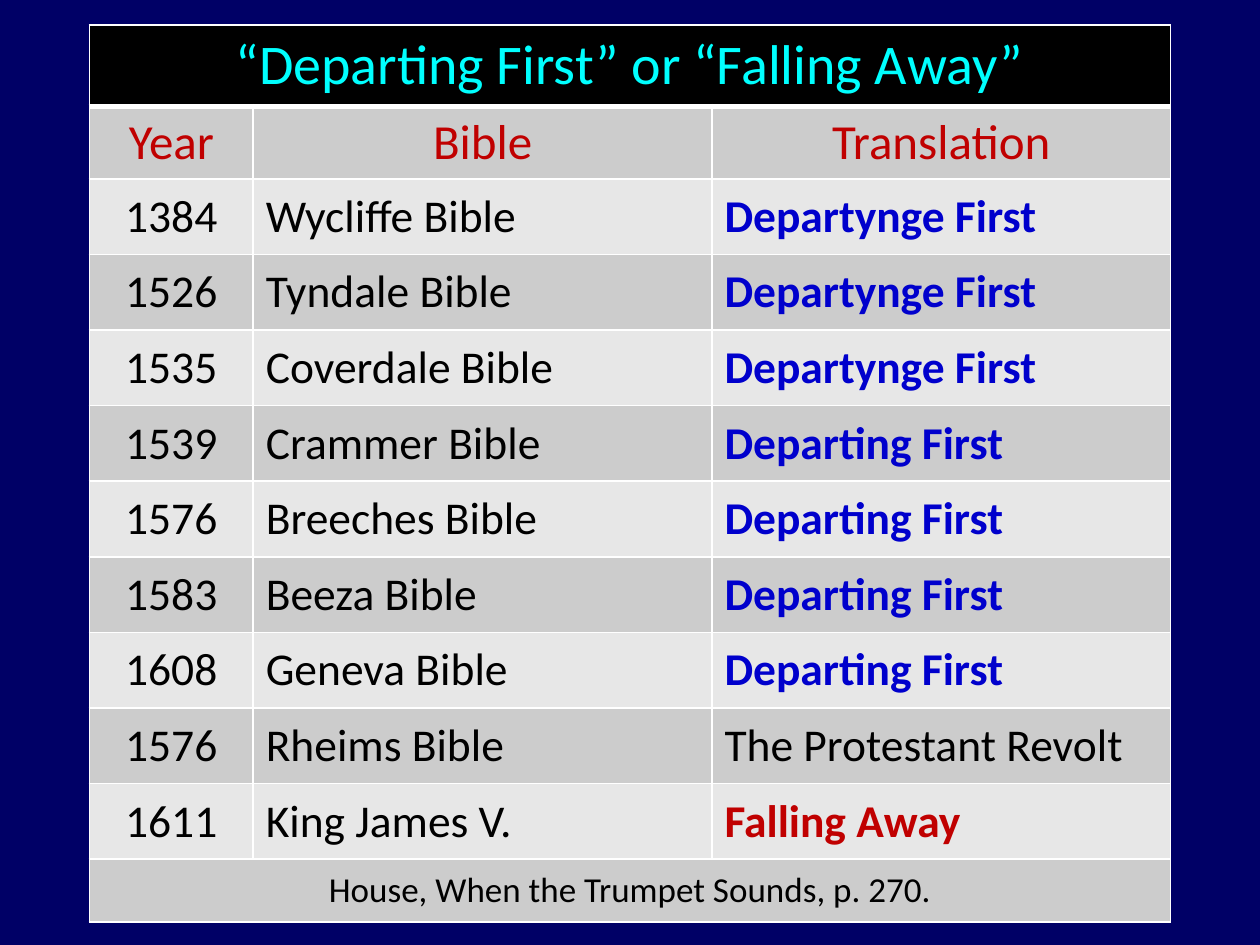
from lxml import etree
from pptx import Presentation
from pptx import util as u
from pptx.dml.color import RGBColor
from pptx.enum import text
from pptx.oxml import ns

NAVY = RGBColor(0x00, 0x00, 0x66)
BLACK = RGBColor(0x00, 0x00, 0x00)
WHITE = RGBColor(0xFF, 0xFF, 0xFF)
CYAN = RGBColor(0x00, 0xFF, 0xFF)
RED = RGBColor(0xC0, 0x00, 0x00)
BLUE = RGBColor(0x00, 0x00, 0xCC)
DARK = RGBColor(0xCC, 0xCC, 0xCC)
LIGHT = RGBColor(0xE7, 0xE7, 0xE7)

TITLE = "“Departing First” or “Falling Away”"
HEADS = ["Year", "Bible", "Translation"]
BIBLES = [
    ("1384", "Wycliffe Bible", "Departynge First"),
    ("1526", "Tyndale Bible", "Departynge First"),
    ("1535", "Coverdale Bible", "Departynge First"),
    ("1539", "Crammer Bible", "Departing First"),
    ("1576", "Breeches Bible", "Departing First"),
    ("1583", "Beeza Bible", "Departing First"),
    ("1608", "Geneva Bible", "Departing First"),
    ("1576", "Rheims Bible", "The Protestant Revolt"),
    ("1611", "King James V.", "Falling Away"),
]
CREDIT = "House, When the Trumpet Sounds, p. 270."
WIDTHS = [93.6, 262.1, 262.1]
HEIGHTS = [45.4, 41] + [43.2] * len(BIBLES) + [36]


def write(cell, words, size=26, color=BLACK, bold=False, center=False):
    """Put formatted text in a cell."""
    cell.vertical_anchor = text.MSO_ANCHOR.MIDDLE
    para = cell.text_frame.paragraphs[0]
    para.alignment = text.PP_ALIGN.CENTER if center else text.PP_ALIGN.LEFT
    run = para.add_run()
    run.text = words
    font = run.font
    font.name, font.size, font.bold = "Calibri", u.Pt(size), bold
    font.color.rgb = color


def edge(cell, **widths):
    """Draw white borders of the given widths on the cell's sides."""
    props = cell._tc.get_or_add_tcPr()
    for side in "LRTB":
        width = u.Pt(widths.get(side, 1))
        line = etree.SubElement(props, ns.qn(f"a:ln{side}"), w=str(width))
        fill = etree.SubElement(line, ns.qn("a:solidFill"))
        etree.SubElement(fill, ns.qn("a:srgbClr"), val=str(WHITE))


def paint(cell, color):
    """Fill a cell with one colour."""
    cell.fill.solid()
    cell.fill.fore_color.rgb = color


def make_grid(slide):
    """Add the table with its sizes, borders, fills and merged rows."""
    count = len(HEIGHTS)
    frame = slide.shapes.add_table(
        count, len(WIDTHS), u.Pt(51.1), u.Pt(14.4),
        u.Pt(sum(WIDTHS)), u.Pt(sum(HEIGHTS)))
    grid = frame.table
    for col, width in zip(grid.columns, WIDTHS):
        col.width = u.Pt(width)
    for num, (row, height) in enumerate(zip(grid.rows, HEIGHTS)):
        row.height = u.Pt(height)
        for cell in row.cells:
            edge(cell, B=3 if num == 0 else 1, T=3 if num == 1 else 1)
            paint(cell, BLACK if num == 0 else DARK if num % 2 else LIGHT)
    for num in (0, count - 1):
        grid.cell(num, 0).merge(grid.cell(num, len(WIDTHS) - 1))
    return grid


def fill_grid(grid):
    """Write the title, headings, Bible rows and credit."""
    write(grid.cell(0, 0), TITLE, size=32, color=CYAN, center=True)
    for col, head in enumerate(HEADS):
        write(grid.cell(1, col), head, size=28, color=RED, center=True)
    for num, (year, name, phrase) in enumerate(BIBLES, 2):
        tint = (BLUE if phrase.endswith("First")
                else RED if phrase == "Falling Away" else BLACK)
        write(grid.cell(num, 0), year, center=True)
        write(grid.cell(num, 1), name)
        write(grid.cell(num, 2), phrase, color=tint, bold=tint != BLACK)
    write(grid.cell(len(HEIGHTS) - 1, 0), CREDIT, size=20, center=True)


def main():
    """Build and save the slide."""
    deck = Presentation()
    deck.slide_width, deck.slide_height = u.Pt(720), u.Pt(540)
    slide = deck.slides.add_slide(deck.slide_layouts[6])
    paint_back = slide.background.fill
    paint_back.solid()
    paint_back.fore_color.rgb = NAVY
    fill_grid(make_grid(slide))
    deck.save("out.pptx")


if __name__ == "__main__":
    main()
